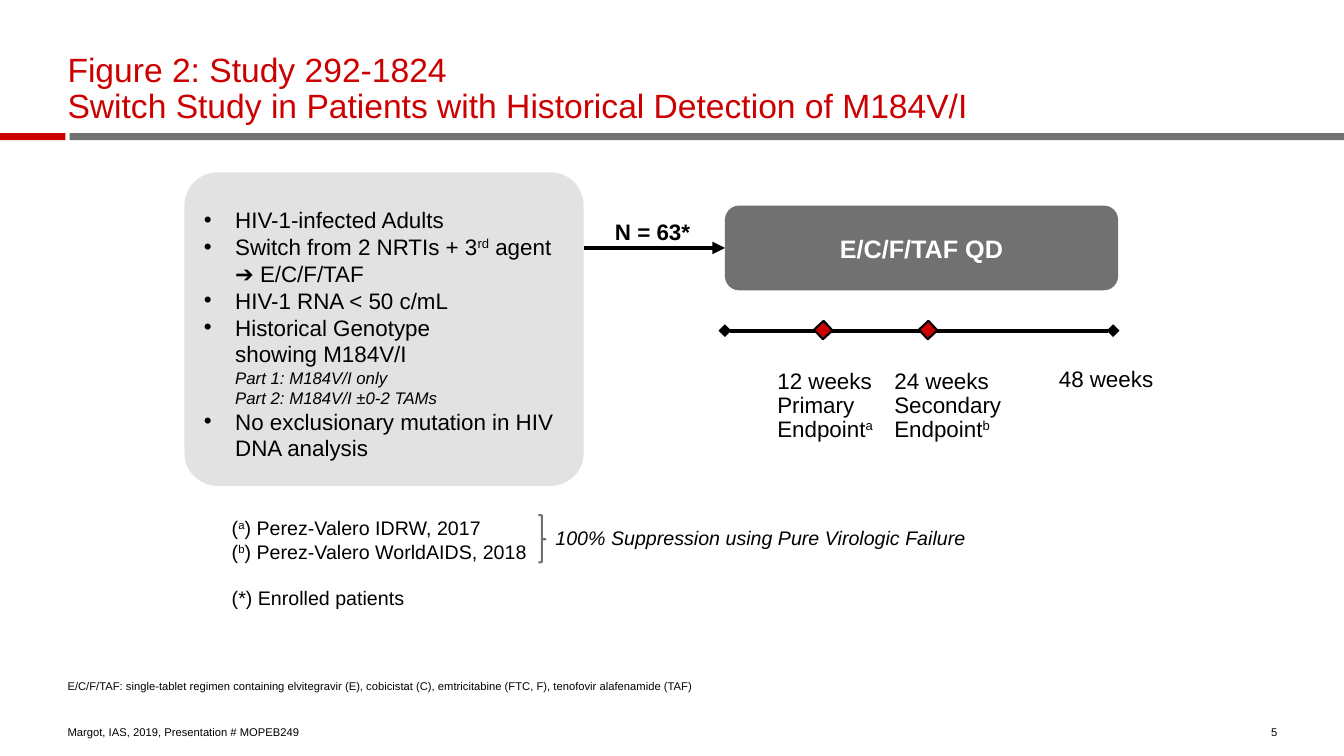
from copy import deepcopy

from lxml.etree import SubElement
from pptx import Presentation
from pptx.dml.color import RGBColor
from pptx.enum.shapes import MSO_CONNECTOR as Link, MSO_SHAPE as Shape
from pptx.enum.text import MSO_ANCHOR as Anchor, PP_ALIGN as Align
from pptx.oxml.ns import qn
from pptx.util import Inches, Pt

COLORS = {
    "red": "CC0000",
    "gray": "717171",
    "pale": "E2E2E2",
    "black": "000000",
    "white": "FFFFFF",
}
SUP = {"baseline": "30000"}
TIGHT = {"margin_left": 0, "margin_top": 0, "margin_right": 0, "margin_bottom": 0}
SNUG = {"line_spacing": 0.9}


def color(name):
    return RGBColor.from_string(COLORS[name])


def apply(target, values):
    for name, value in values.items():
        setattr(target, name, value)


class SlideBuilder:
    font = "Arial"

    def __init__(self, slide):
        self.shapes = slide.shapes

    def add_run(self, paragraph, text, tint, font):
        values = dict(font)
        baseline = values.pop("baseline", None)
        for index, line in enumerate(text.split("\n")):
            if index:
                paragraph.add_line_break()
                paragraph._p[-1].append(deepcopy(run._r.rPr))
            run = paragraph.add_run()
            run.text = line
            apply(run.font, {"name": self.font, **values})
            run.font.color.rgb = color(tint)
            if baseline:
                run._r.get_or_add_rPr().set("baseline", baseline)

    def label(self, shape, paragraphs, size, tint="black", font={}, frame={}, layout={}, bullet=None):
        text_frame = shape.text_frame
        apply(text_frame, {"word_wrap": True, **frame})
        for index, runs in enumerate(paragraphs):
            paragraph = text_frame.add_paragraph() if index else text_frame.paragraphs[0]
            apply(paragraph, {"alignment": Align.LEFT, **layout})
            if bullet:
                properties = paragraph._p.get_or_add_pPr()
                properties.set("marL", str(Inches(0.31)))
                properties.set("indent", str(-Inches(0.31)))
                SubElement(properties, qn("a:buFont"), typeface=self.font)
                SubElement(properties, qn("a:buChar"), char=bullet)
            for text, extra in runs:
                self.add_run(paragraph, text, tint, {"size": Pt(size), **font, **extra})
        return text_frame

    def text(self, box, paragraphs, size, **style):
        return self.label(self.shapes.add_textbox(*map(Inches, box)), paragraphs, size, **style)

    def shape(self, kind, box, fill=None, line=None, adjust=(), rotation=0):
        shape = self.shapes.add_shape(kind, *map(Inches, box))
        shape.shadow.inherit = False
        shape.rotation = rotation
        for index, value in enumerate(adjust):
            shape.adjustments[index] = value
        if fill:
            shape.fill.solid()
            shape.fill.fore_color.rgb = color(fill)
        else:
            shape.fill.background()
        if line:
            shape.line.color.rgb = color(line)
            shape.line.width = Pt(1.5)
        else:
            shape.line.fill.background()
        return shape

    def arrow(self, start, end, **heads):
        arrow = self.shapes.add_connector(Link.STRAIGHT, *map(Inches, (*start, *end)))
        arrow.line.color.rgb = color("black")
        arrow.line.width = Pt(3)
        properties = arrow._element.spPr
        for tag, kind in heads.items():
            SubElement(properties.find(qn("a:ln")), qn(f"a:{tag}"), type=kind)
        SubElement(properties, qn("a:effectLst"))
        return arrow


def add_header_and_footer(page):
    page.shape(Shape.RECTANGLE, (0.69, 1.32, 12.65, 0.07), "gray")
    page.shape(Shape.RECTANGLE, (0, 1.32, 0.65, 0.07), "red")
    title = "Figure 2: Study 292-1824\nSwitch Study in Patients with Historical Detection of M184V/I"
    bottom = {**TIGHT, "vertical_anchor": Anchor.BOTTOM}
    page.text((0.67, 0.51, 12, 0.74), [[(title, {})]], 24, tint="red", frame=bottom, layout=SNUG)
    page.text((0.67, 7.15, 4.44, 0.18), [[("Margot, IAS, 2019, Presentation # MOPEB249", {})]], 8, frame=bottom)
    page.text((12.31, 7.15, 0.36, 0.18), [[("5", {})]], 8, frame=bottom, layout={"alignment": Align.RIGHT})
    abbreviations = (
        "E/C/F/TAF: single-tablet regimen containing elvitegravir (E), cobicistat (C), "
        "emtricitabine (FTC, F), tenofovir alafenamide (TAF)"
    )
    page.text((0.67, 6.75, 7.43, 0.24), [[(abbreviations, {})]], 8, frame=TIGHT, layout=SNUG)


def add_study_design(page):
    criteria = page.shape(Shape.ROUNDED_RECTANGLE, (1.83, 1.71, 3.96, 3.11), "pale", adjust=[0.105])
    parts = {"size": Pt(12), "italic": True}
    page.label(
        criteria,
        [
            [("HIV-1-infected Adults", {})],
            [("Switch from 2 NRTIs + 3", {}), ("rd", SUP), (" agent ➔ E/C/F/TAF", {})],
            [("HIV-1 RNA < 50 c/mL", {})],
            [
                ("Historical Genotype \nshowing M184V/I\n", {}),
                ("Part 1: M184V/I only\nPart 2: M184V/I ±0-2 TAMs", parts),
            ],
            [("No exclusionary mutation in HIV DNA analysis", {})],
        ],
        16,
        bullet="•",
        frame={"vertical_anchor": Anchor.TOP, "margin_top": Inches(0.24)},
    )
    regimen = page.shape(Shape.ROUNDED_RECTANGLE, (7.19, 2.04, 3.9, 0.84), "gray", adjust=[0.167])
    page.label(
        regimen, [[("E/C/F/TAF QD", {})]], 18, tint="white", font={"bold": True},
        frame={"vertical_anchor": Anchor.MIDDLE}, layout={"alignment": Align.CENTER},
    )
    enrollment = page.arrow((5.79, 2.46), (7.19, 2.46), tailEnd="triangle")
    enrollment.end_connect(regimen, 1)
    page.text((6.1, 2.19, 0.97, 0.24), [[("N = 63*", {})]], 16, font={"bold": True}, frame=TIGHT, layout=SNUG)


def add_timeline(page):
    label_frame = {**TIGHT, "word_wrap": False}
    page.arrow((7.19, 3.28), (11.04, 3.28), headEnd="diamond", tailEnd="diamond")
    page.text(
        (10.26, 3.65, 1.42, 0.33), [[("48 weeks", {})]], 16,
        frame=label_frame, layout={**SNUG, "alignment": Align.CENTER},
    )
    endpoints = [
        (7.71, 8.1, "12 weeks", "Primary", "a"),
        (8.87, 9.14, "24 weeks", "Secondary", "b"),
    ]
    for label_left, marker_left, week, rank, note in endpoints:
        lines = [[(week, {})], [(rank, {})], [("Endpoint", {}), (note, SUP)]]
        page.text((label_left, 3.67, 1.42, 0.8), lines, 16, frame=label_frame, layout=SNUG)
        page.shape(Shape.RECTANGLE, (marker_left, 3.21, 0.13, 0.13), "red", "black", rotation=47.1)


def add_references(page):
    sources = [("a", "Perez-Valero IDRW, 2017"), ("b", "Perez-Valero WorldAIDS, 2018")]
    notes = [[("(", {}), (mark, SUP), (f") {source}", {})] for mark, source in sources]
    notes.append([("(*) Enrolled patients", {})])
    unwrapped = {"word_wrap": False}
    references = page.text((2.2, 5.07, 3.15, 1.04), notes, 14, frame=unwrapped)
    references.paragraphs[-1].space_before = Pt(16)
    page.shape(Shape.RIGHT_BRACE, (5.34, 5.11, 0.07, 0.47), line="gray", adjust=[0.083, 0.51])
    suppression = "100% Suppression using Pure Virologic Failure"
    page.text((5.41, 5.17, 4.29, 0.34), [[(suppression, {})]], 14, font={"italic": True}, frame=unwrapped)


def main():
    deck = Presentation()
    apply(deck, {"slide_width": Inches(13.33), "slide_height": Inches(7.5)})
    page = SlideBuilder(deck.slides.add_slide(deck.slide_layouts[6]))
    add_header_and_footer(page)
    add_study_design(page)
    add_timeline(page)
    add_references(page)
    deck.save("out.pptx")


if __name__ == "__main__":
    main()
